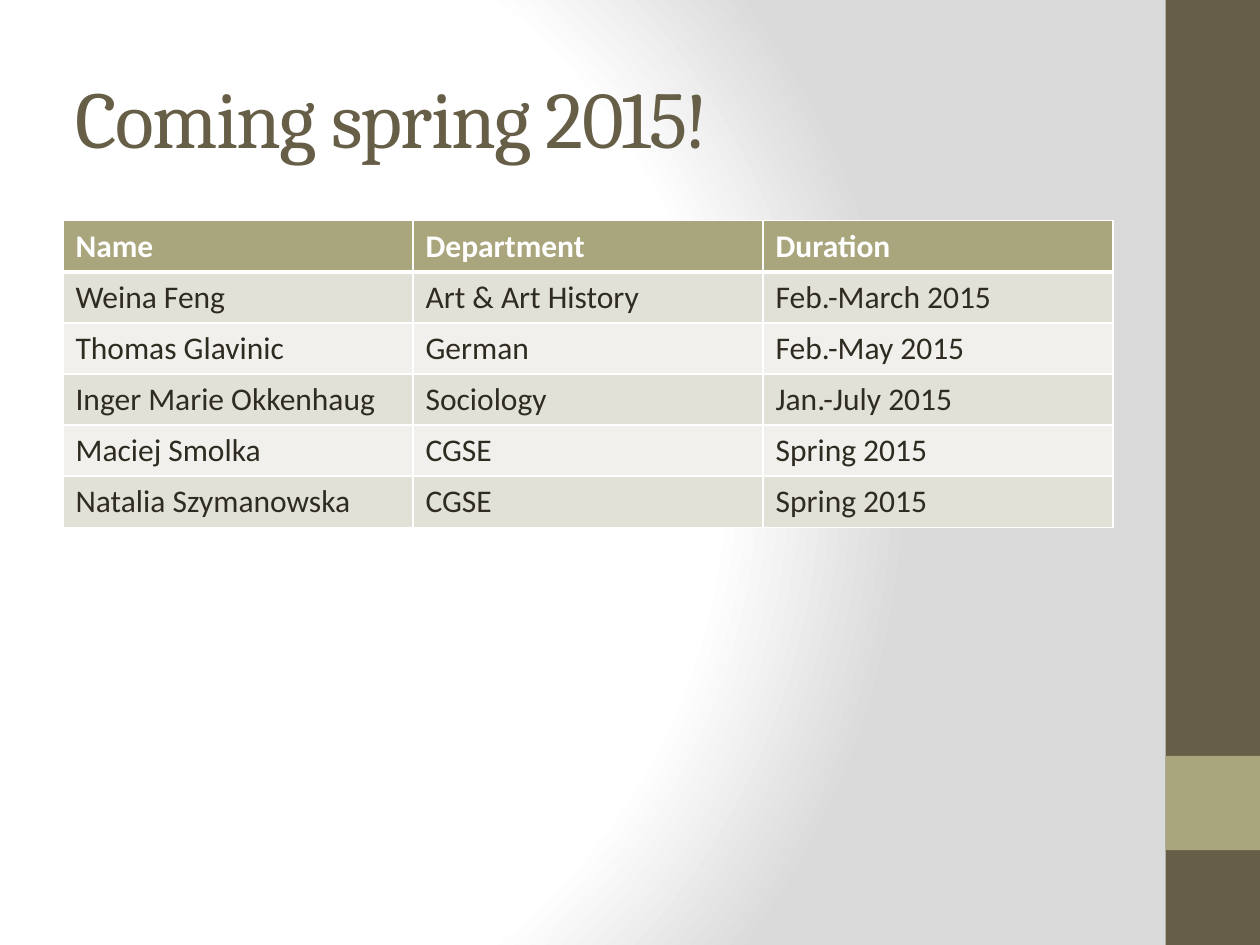
import pptx
import pptx.dml.color
import pptx.enum.shapes
import pptx.enum.text
import pptx.oxml
import pptx.oxml.ns
import pptx.util
from pptx.util import Cm

TITLE = "Coming spring 2015!"
HEADER = ("Name", "Department", "Duration")
VISITORS = [
    ("Weina Feng", "Art & Art History", "Feb.-March 2015"),
    ("Thomas Glavinic", "German", "Feb.-May 2015"),
    ("Inger Marie Okkenhaug", "Sociology", "Jan.-July 2015"),
    ("Maciej Smolka", "CGSE", "Spring 2015"),
    ("Natalia Szymanowska", "CGSE", "Spring 2015"),
]
THEME = {
    "brown": "675E47", "olive": "A9A57C", "ink": "2F2B20", "white": "FFFFFF",
    "bands": ("E2E1D7", "F1F0EC"),
    "backdrop": ((0, "FFFFFF"), (75, "FFFFFF"), (100, "DADADA")),
    "title_font": "Cambria", "body_font": "Calibri",
    "title_size": 46, "body_size": 18,
    "rule": 1, "header_rule": 3,
}
LEFT, CONTENT_W = Cm(1.27), Cm(21.17)
TITLE_TOP, TITLE_H = Cm(0.76), Cm(3.18)
TABLE_TOP, ROW_H = Cm(4.45), Cm(1.03)
BAR_LEFT, BAR_W, ACCENT_TOP = Cm(23.5), Cm(1.9), Cm(15.24)


def rgb(value):
    return pptx.dml.color.RGBColor.from_string(value)


def write(tf, text, *, font, size, color, bold=False, spacing=None):
    """Put one run in the frame; spacing is between letters, in points."""
    r = tf.paragraphs[0].add_run()
    r.text = text
    r.font.name, r.font.size, r.font.bold = font, pptx.util.Pt(size), bold
    r.font.color.rgb = rgb(color)
    if spacing is not None:
        r.font._element.set("spc", str(int(spacing * 100)))
    tf.paragraphs[0].alignment = pptx.enum.text.PP_ALIGN.LEFT


def set_backdrop(s):
    stops = "".join(
        f'<a:gs pos="{pos * 1000}"><a:srgbClr val="{color}"/></a:gs>'
        for pos, color in THEME["backdrop"])
    s.element.cSld.insert(0, pptx.oxml.parse_xml(
        f'<p:bg {pptx.oxml.ns.nsdecls("p", "a")}><p:bgPr>'
        f'<a:gradFill rotWithShape="1"><a:gsLst>{stops}</a:gsLst>'
        '<a:path path="circle"><a:fillToRect l="20000" t="50000" r="100000" b="50000"/>'
        '</a:path></a:gradFill><a:effectLst/></p:bgPr></p:bg>'))


def add_bar(s, top, height, color):
    sp = s.shapes.add_shape(
        pptx.enum.shapes.MSO_SHAPE.RECTANGLE, BAR_LEFT, top, BAR_W, height)
    sp.shadow.inherit = False
    sp.fill.solid()
    sp.fill.fore_color.rgb = rgb(color)
    sp.line.fill.background()


def set_borders(cell, **widths):
    """Draw white borders; widths in points by side, L, R, T and B."""
    tc_pr = cell._tc.get_or_add_tcPr()
    for side, width in widths.items():
        tc_pr.append(pptx.oxml.parse_xml(
            f'<a:ln{side} {pptx.oxml.ns.nsdecls("a")} w="{pptx.util.Pt(width)}">'
            f'<a:solidFill><a:srgbClr val="{THEME["white"]}"/></a:solidFill></a:ln{side}>'))


def add_visitors(s):
    rows = [HEADER, *VISITORS]
    table = s.shapes.add_table(
        len(rows), len(HEADER), LEFT, TABLE_TOP, CONTENT_W, ROW_H * len(rows)).table
    for row in table.rows:
        row.height = ROW_H
    thin, thick = THEME["rule"], THEME["header_rule"]
    for i, row in enumerate(rows):
        head = i == 0
        fill = THEME["olive"] if head else THEME["bands"][(i - 1) % 2]
        for j, text in enumerate(row):
            cell = table.cell(i, j)
            set_borders(cell, L=thin, R=thin, T=thick if i == 1 else thin,
                        B=thick if head else thin)
            cell.fill.solid()
            cell.fill.fore_color.rgb = rgb(fill)
            write(cell.text_frame, text, font=THEME["body_font"],
                  size=THEME["body_size"], bold=head,
                  color=THEME["white"] if head else THEME["ink"])


def main():
    prs = pptx.Presentation()
    prs.slide_width, prs.slide_height = Cm(25.4), Cm(19.05)
    s = prs.slides.add_slide(prs.slide_layouts.get_by_name("Title Only"))
    set_backdrop(s)
    add_bar(s, 0, prs.slide_height, THEME["brown"])
    add_bar(s, ACCENT_TOP, BAR_W, THEME["olive"])

    title = s.shapes.title
    title.left, title.top, title.width, title.height = LEFT, TITLE_TOP, CONTENT_W, TITLE_H
    tf = title.text_frame
    tf.auto_size = pptx.enum.text.MSO_AUTO_SIZE.NONE
    tf.vertical_anchor = pptx.enum.text.MSO_ANCHOR.MIDDLE
    write(tf, TITLE, font=THEME["title_font"], size=THEME["title_size"],
          color=THEME["brown"], spacing=-1)

    add_visitors(s)
    prs.save("out.pptx")


if __name__ == "__main__":
    main()
